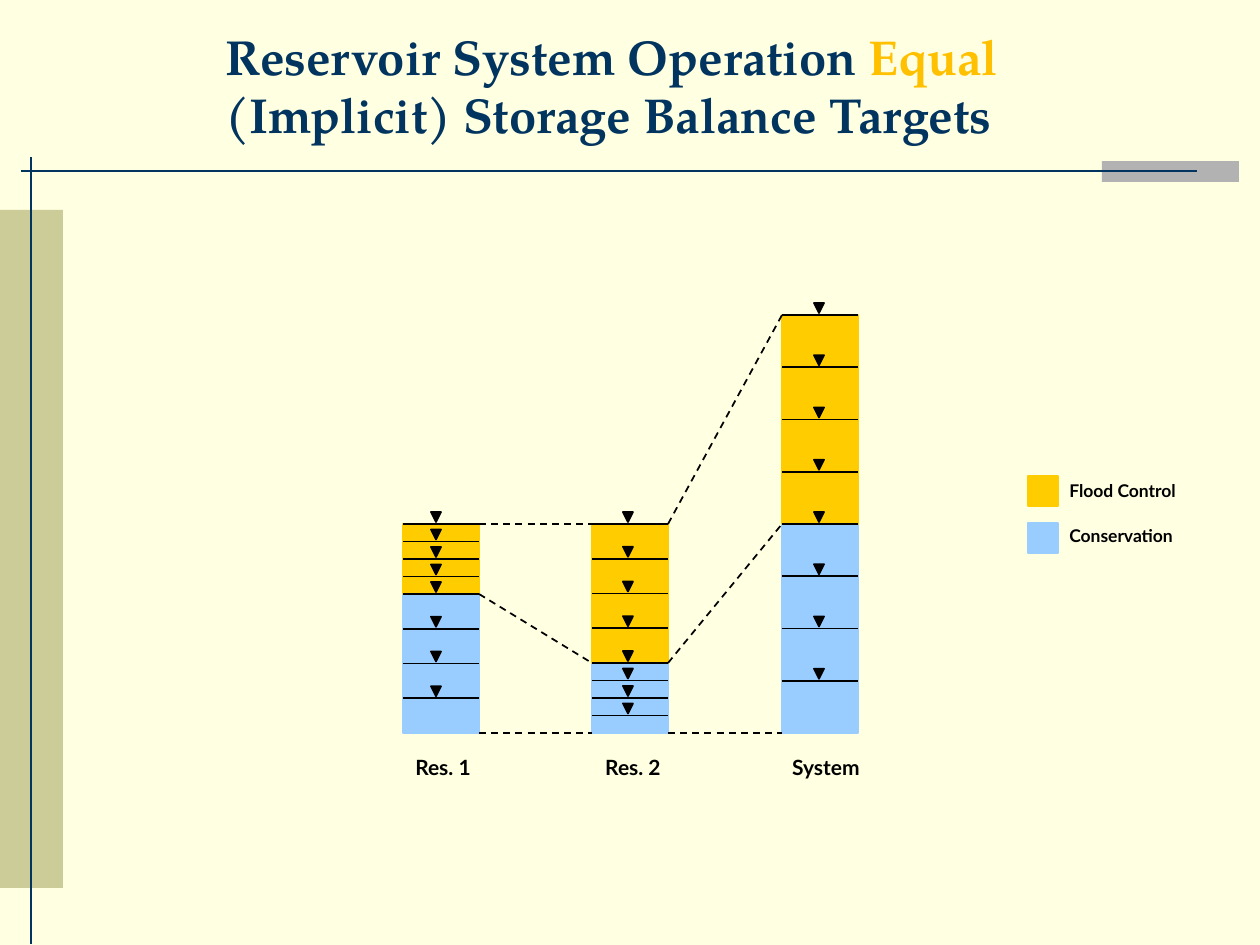
from pptx import Presentation
from pptx.dml.color import RGBColor
from pptx.enum.dml import MSO_LINE
from pptx.enum.shapes import MSO_CONNECTOR, MSO_SHAPE
from pptx.enum.text import MSO_ANCHOR, PP_ALIGN
from pptx.util import Emu, Pt
from lxml.etree import SubElement
from pptx.oxml.ns import qn

EMU_PER_PX = 914400 / 126
NAVY, BLACK = "01345F", "000000"
FLOOD, CONSERVATION = "FFCC00", "99CCFF"
BAR_WIDTH, BASE, RESERVOIR_TOP, SLICES = 76, 733, 524, 4
MARKER_SIZE, MARKER_RISE = 10, 12
BARS = [
    ("Res. 1", 403, 594, RESERVOIR_TOP, 33, (388, 110)),
    ("Res. 2", 592, 663, RESERVOIR_TOP, 36, (578, 110)),
    ("System", 782, RESERVOIR_TOP, 315, 37, (765, 122)),
]
LABEL_FORMAT = {"name": "Lato", "bold": True}
TITLE_FORMAT = {"name": "TeX Gyre Pagella", "bold": True, "size": Pt(28)}


def px(length):
    return Emu(round(length * EMU_PER_PX))


def color(hex_value):
    return RGBColor.from_string(hex_value)


def add_block(slide, left, top, width, height, fill, outlined=True, kind=MSO_SHAPE.RECTANGLE):
    block = slide.shapes.add_shape(kind, px(left), px(top), px(width), px(height))
    block.shadow.inherit = False
    block.fill.solid()
    block.fill.fore_color.rgb = color(fill)
    if outlined:
        block.line.color.rgb = color(fill)
        block.line.width = Pt(1)
    else:
        block.line.fill.background()
    return block


def add_line(slide, start, end, stroke=BLACK, width=1, dashed=False):
    points = [px(value) for value in (*start, *end)]
    line = slide.shapes.add_connector(MSO_CONNECTOR.STRAIGHT, *points)
    line.line.color.rgb = color(stroke)
    line.line.width = Pt(width)
    if dashed:
        line.line.dash_style = MSO_LINE.DASH
    SubElement(line._element.spPr, qn("a:effectLst"))


def add_text(slide, left, top, width, height, runs, font_format,
             align=PP_ALIGN.LEFT, anchor=MSO_ANCHOR.TOP):
    box = slide.shapes.add_textbox(px(left), px(top), px(width), px(height))
    frame = box.text_frame
    frame.word_wrap = True
    frame.vertical_anchor = anchor
    paragraph = frame.paragraphs[0]
    paragraph.alignment = align
    for words, shade in runs:
        run = paragraph.add_run()
        run.text = words
        for attribute, value in font_format.items():
            setattr(run.font, attribute, value)
        run.font.color.rgb = color(shade)


def add_level(slide, left, level, marker_offset):
    add_line(slide, (left, level), (left + BAR_WIDTH, level))
    marker = add_block(slide, left + marker_offset - MARKER_SIZE / 2, level - MARKER_RISE,
                       MARKER_SIZE, MARKER_SIZE, BLACK, kind=MSO_SHAPE.ISOSCELES_TRIANGLE)
    marker.rotation = 180


def add_bar(slide, name, left, boundary, top, marker_offset, label_span):
    zones = [(boundary, BASE, CONSERVATION), (top, boundary, FLOOD)]
    for upper, lower, fill in zones:
        add_block(slide, left, upper, BAR_WIDTH, lower - upper, fill)
    for upper, lower, _ in zones:
        for step in range(1, SLICES + 1):
            level = lower - (lower - upper) * step / SLICES
            add_level(slide, left, level, marker_offset)
    label_left, label_width = label_span
    add_text(slide, label_left, 748, label_width, 38, [(name, BLACK)],
             {**LABEL_FORMAT, "size": Pt(12)}, PP_ALIGN.CENTER)


def add_bar_links(slide):
    for (_, left, *levels, _, _), (_, next_left, *next_levels, _, _) in zip(BARS, BARS[1:]):
        for level, next_level in zip([BASE, *levels], [BASE, *next_levels]):
            add_line(slide, (left + BAR_WIDTH, level), (next_left, next_level), dashed=True)


def add_legend(slide):
    for row, (name, fill) in enumerate([("Flood Control", FLOOD), ("Conservation", CONSERVATION)]):
        add_block(slide, 1028, 476 + 47 * row, 30, 30, fill)
        add_text(slide, 1057, 474 + 45 * row, 165, 34, [(name, BLACK)],
                 {**LABEL_FORMAT, "size": Pt(10)})


def add_frame(slide):
    add_block(slide, 1102, 161, 137, 21, "B2B2B2", outlined=False)
    add_line(slide, (21, 171), (1197, 171), NAVY, 1.5)
    add_block(slide, 0, 210, 63, 678, "CCCC99", outlined=False)
    add_line(slide, (31, 157), (31, 944), NAVY, 1.5)


def main():
    deck = Presentation()
    deck.slide_width, deck.slide_height = px(1260), px(945)
    slide = deck.slides.add_slide(deck.slide_layouts[6])
    slide.background.fill.solid()
    slide.background.fill.fore_color.rgb = color("FFFFE1")
    add_frame(slide)
    for bar in BARS:
        add_bar(slide, *bar)
    add_bar_links(slide)
    add_legend(slide)
    title = [("Reservoir System Operation ", NAVY), ("Equal", "FFC000"),
             (" (Implicit) Storage Balance Targets", NAVY)]
    add_text(slide, 213, 10, 1017, 150, title, TITLE_FORMAT, anchor=MSO_ANCHOR.MIDDLE)
    deck.save("out.pptx")


if __name__ == "__main__":
    main()
